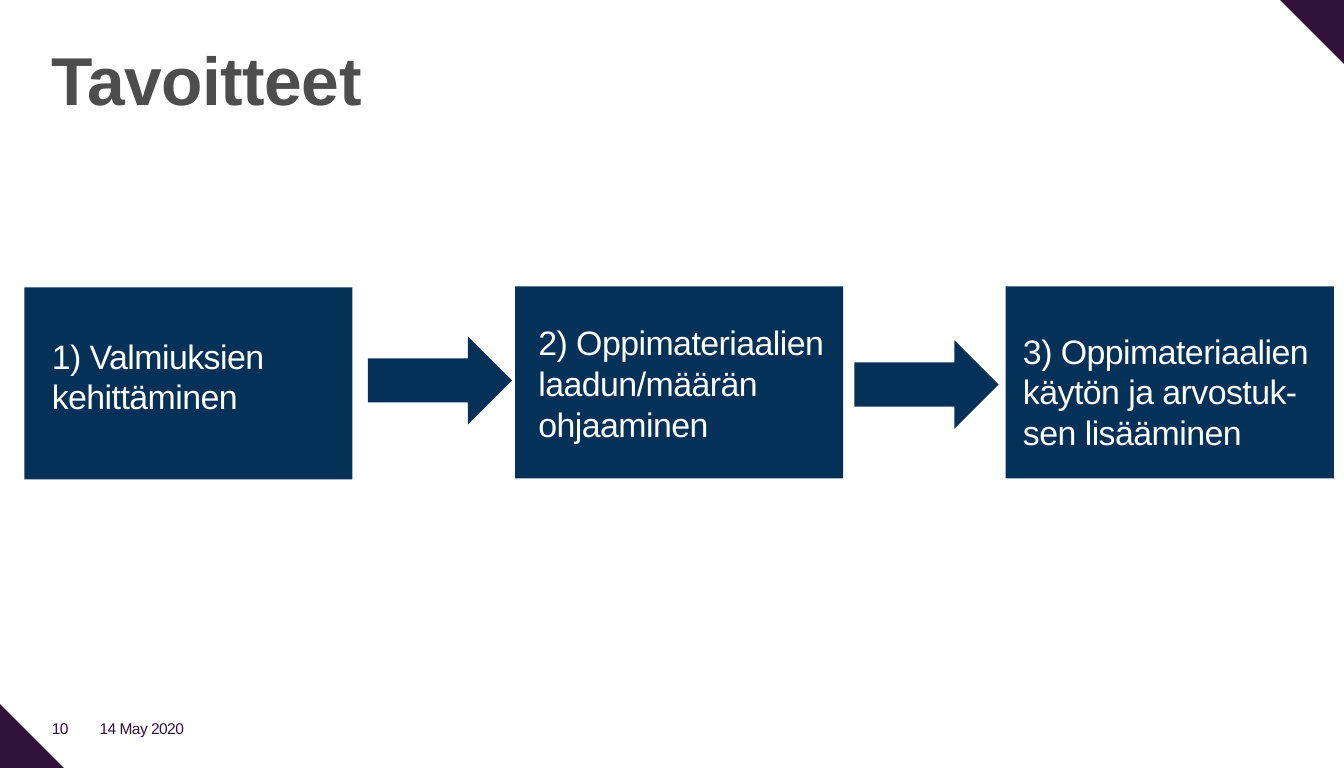
"""Build the Tavoitteet slide: three goals linked by arrows."""
import pptx
import pptx.dml.color
import pptx.enum.shapes
import pptx.enum.text
import pptx.util

Inches = pptx.util.Inches
Pt = pptx.util.Pt
SHAPE = pptx.enum.shapes.MSO_SHAPE
ANCHOR = pptx.enum.text.MSO_ANCHOR

WIDTH, HEIGHT = 13.23, 7.56
COLORS = {"plum": "30123A", "navy": "043158", "grey": "4D4D4D", "white": "FFFFFF"}
FORMATS = {
    "title": {"size": Pt(48), "bold": True},
    "goal": {"size": Pt(24)},
    "footer": {"size": Pt(11)},
}
GOALS = [
    ("1) Valmiuksien kehittäminen", 2.83, (0.23, 0.43, 2.84, 0.89)),
    ("2) Oppimateriaalien laadun/määrän ohjaaminen", 2.82, (0.19, 0.31, 3.14, 1.29)),
    ("3) Oppimateriaalien käytön ja arvostuk-sen lisääminen", 2.82, (0.13, 0.39, 3.15, 1.29)),
]
ARROWS = [(3.62, 3.31), (8.41, 3.35)]


def rgb(name):
    return pptx.dml.color.RGBColor.from_string(COLORS[name])


def add_block(s, kind, box, color, rotation=0):
    sp = s.shapes.add_shape(kind, *map(Inches, box))
    sp.shadow.inherit = False
    sp.fill.solid()
    sp.fill.fore_color.rgb = rgb(color)
    sp.line.fill.background()
    sp.rotation = rotation
    return sp


def add_text(s, box, text, style, color, anchor=ANCHOR.TOP, line_spacing=None):
    tf = s.shapes.add_textbox(*map(Inches, box)).text_frame
    frame = dict.fromkeys(("margin_left", "margin_top", "margin_right", "margin_bottom"), Inches(0.04))
    for name, value in {**frame, "word_wrap": True, "vertical_anchor": anchor}.items():
        setattr(tf, name, value)
    p = tf.paragraphs[0]
    p.line_spacing = line_spacing
    r = p.add_run()
    r.text = text
    for name, value in {"name": "Arial", **FORMATS[style]}.items():
        setattr(r.font, name, value)
    r.font.color.rgb = rgb(color)
    r._r.get_or_add_rPr().set("spc", "-40")


def add_corners(s, box, size=0.63):
    left, top, width, height = box
    add_block(s, SHAPE.RIGHT_TRIANGLE, (left, top + height - size, size, size), "plum")
    add_block(s, SHAPE.RIGHT_TRIANGLE, (left + width - size, top, size, size), "plum", 180)


def add_footer(s, box):
    left, top, width, height = box
    number = 0.47
    add_text(s, (left, top, number, height), "10", "footer", "plum", ANCHOR.MIDDLE)
    add_text(s, (left + number, top, width - number, height), "14 May 2020",
             "footer", "plum", ANCHOR.MIDDLE)


def add_goal(s, box, text, text_box):
    left, top = box[:2]
    dx, dy, width, height = text_box
    add_block(s, SHAPE.RECTANGLE, box, "navy")
    add_text(s, (left + dx, top + dy, width, height), text, "goal", "white")


def main():
    prs = pptx.Presentation()
    prs.slide_width, prs.slide_height = Inches(WIDTH), Inches(HEIGHT)
    s = prs.slides.add_slide(prs.slide_layouts[6])
    add_corners(s, (0, 0, WIDTH, HEIGHT))
    add_text(s, (0.47, 0.39, 12.28, 1.17), "Tavoitteet", "title", "grey", line_spacing=0.95)
    add_footer(s, (0.47, 7.09, 1.89, 0.16))
    for i, (text, top, text_box) in enumerate(GOALS):
        add_goal(s, (0.24 + 4.83 * i, top, 3.23, 1.89), text, text_box)
    for left, top in ARROWS:
        add_block(s, SHAPE.RIGHT_ARROW, (left, top, 1.42, 0.87), "navy")
    prs.save("out.pptx")


if __name__ == "__main__":
    main()
